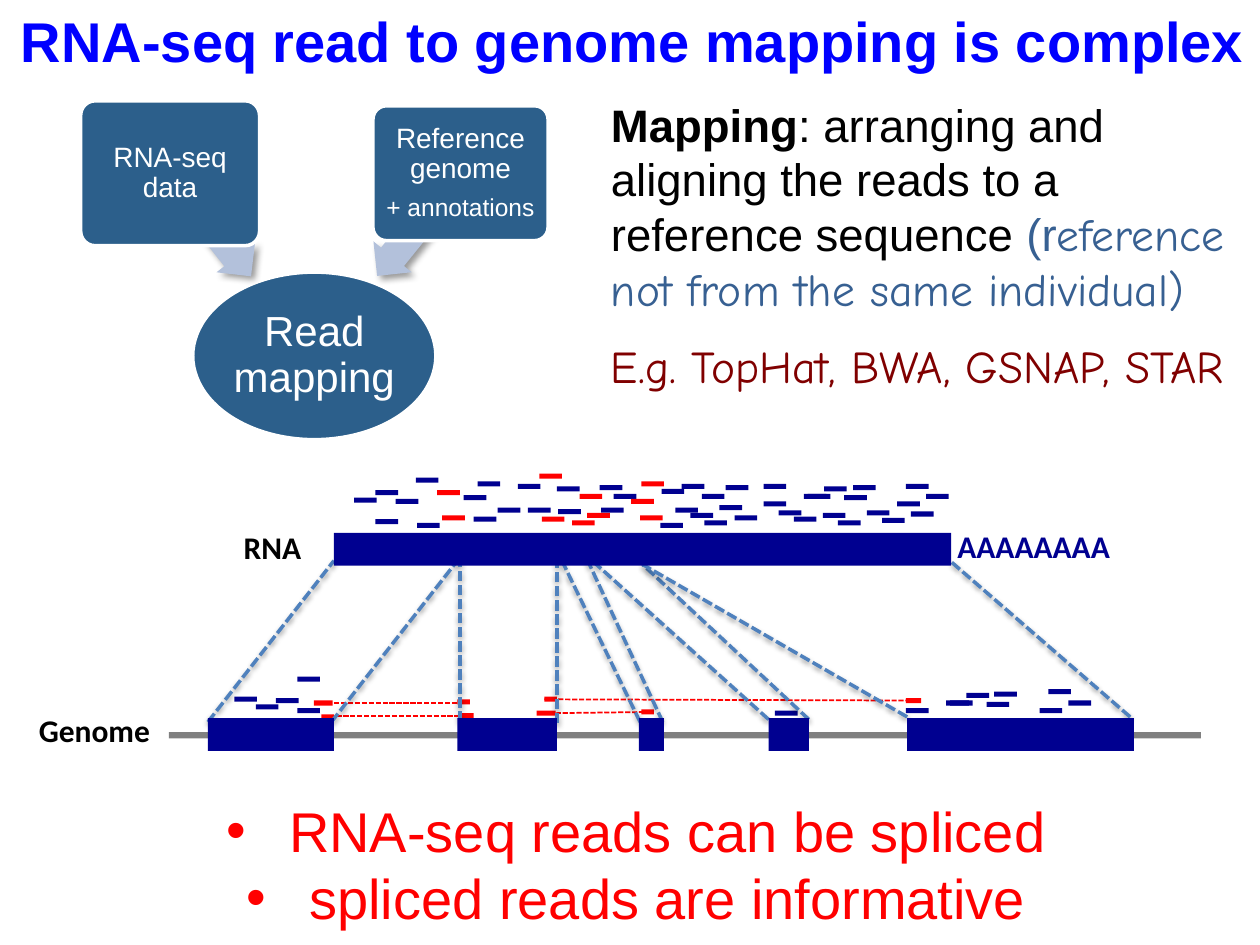
from lxml.etree import SubElement
from pptx import Presentation
from pptx.dml.color import RGBColor
from pptx.enum.dml import MSO_LINE
from pptx.enum.shapes import MSO_CONNECTOR, MSO_SHAPE
from pptx.enum.text import MSO_ANCHOR, PP_ALIGN
from pptx.oxml.ns import qn
from pptx.util import Inches, Pt

NAVY, RED, STEEL, WHITE, BLACK = "000090", "FF0000", "2C5F8B", "FFFFFF", "000000"
COLUMNS, ROWS = 100, 75
READ_WIDTH, READ_HEIGHT = 1.8, 0.4
EXON_TOP, EXON_HEIGHT = 57, 2.6


def color(hex_string):
    return RGBColor.from_string(hex_string)


def set_font(font, size, hex_color, name="Arial", bold=False):
    font.size, font.name, font.bold = Pt(size), name, bold
    font.color.rgb = color(hex_color)


class MappingSlide:
    """Places elements on a grid of 100 columns by 75 rows."""

    def __init__(self, deck):
        self.slide = deck.slides.add_slide(deck.slide_layouts[5])
        self.column = deck.slide_width / COLUMNS
        self.row = deck.slide_height / ROWS

    def place(self, left, top, width, height):
        return (round(left * self.column), round(top * self.row),
                round(width * self.column), round(height * self.row))

    def effects(self, element, shadow=None):
        effect_list = SubElement(element._element.spPr, qn("a:effectLst"))
        if shadow:
            alpha, blur, distance, angle = shadow
            outer = SubElement(effect_list, qn("a:outerShdw"), blurRad=str(Pt(blur)),
                               dist=str(Pt(distance)), dir=str(angle * 60000),
                               rotWithShape="0")
            black = SubElement(outer, qn("a:srgbClr"), val=BLACK)
            SubElement(black, qn("a:alpha"), val=str(alpha * 1000))

    def title(self, text, box):
        heading = self.slide.shapes.title
        heading.left, heading.top, heading.width, heading.height = self.place(*box)
        frame = heading.text_frame
        frame.word_wrap, frame.vertical_anchor = True, MSO_ANCHOR.TOP
        frame.margin_left = Inches(0.15)
        frame.text = text
        paragraph = frame.paragraphs[0]
        paragraph.alignment = PP_ALIGN.CENTER
        set_font(paragraph.font, 32, "0000FF", bold=True)

    def shape(self, kind, box, fill, outline=None, shadow=None, rotation=0, adjust=()):
        shape = self.slide.shapes.add_shape(kind, *self.place(*box))
        for index, value in enumerate(adjust):
            shape.adjustments[index] = value
        shape.rotation = rotation
        shape.fill.solid()
        shape.fill.fore_color.rgb = color(fill)
        if outline:
            shape.line.color.rgb = color(outline)
            shape.line.width = Pt(2)
        else:
            shape.line.fill.background()
        self.effects(shape, shadow)
        return shape

    def bar(self, left, top, width, height=READ_HEIGHT, fill=NAVY):
        self.shape(MSO_SHAPE.RECTANGLE, (left, top, width, height), fill)

    def reads(self, places, fill=NAVY):
        for left, top in places:
            self.bar(left, top, READ_WIDTH, fill=fill)

    def step(self, kind, box, lines, inset, adjust=()):
        """Workflow shape; lines are (text, size) pairs."""
        step = self.shape(kind, box, STEEL, outline=WHITE, adjust=adjust)
        frame = step.text_frame
        frame.word_wrap, frame.vertical_anchor = True, MSO_ANCHOR.MIDDLE
        frame.margin_left = frame.margin_right = Inches(inset)
        frame.margin_top = frame.margin_bottom = Inches(inset)
        for index, (text, size) in enumerate(lines):
            paragraph = frame.add_paragraph() if index else frame.paragraphs[0]
            paragraph.text = text
            paragraph.alignment = PP_ALIGN.CENTER
            paragraph.line_spacing = 0.9
            paragraph.space_after = Pt(round(size * 0.35))
            set_font(paragraph.font, size, WHITE)

    def dashed(self, start, end, hex_color, width, shadow=None):
        line = self.slide.shapes.add_connector(
            MSO_CONNECTOR.STRAIGHT, *self.place(*start, *end))
        line.line.color.rgb = color(hex_color)
        line.line.width = Pt(width)
        line.line.dash_style = MSO_LINE.SQUARE_DOT
        self.effects(line, shadow)

    def text_frame(self, box, wrap=True):
        frame = self.slide.shapes.add_textbox(*self.place(*box)).text_frame
        frame.word_wrap = wrap
        return frame

    def label(self, text, box, hex_color=BLACK, align=PP_ALIGN.LEFT):
        paragraph = self.text_frame(box, wrap=False).paragraphs[0]
        paragraph.text, paragraph.alignment = text, align
        set_font(paragraph.font, 18, hex_color, "Calibri", bold=True)

    def definition(self, box, paragraphs):
        """Each paragraph is a list of (text, colour, font, bold) runs."""
        frame = self.text_frame(box)
        for index, runs in enumerate(paragraphs):
            paragraph = frame.add_paragraph() if index else frame.paragraphs[0]
            if index:
                paragraph.space_before = Pt(13)
            for text, hex_color, name, bold in runs:
                run = paragraph.add_run()
                run.text = text
                set_font(run.font, 26, hex_color, name, bold)

    def bullets(self, box, lines):
        frame = self.text_frame(box)
        for index, text in enumerate(lines):
            paragraph = frame.add_paragraph() if index else frame.paragraphs[0]
            paragraph.text = text
            paragraph.alignment = PP_ALIGN.CENTER
            properties = paragraph._p.get_or_add_pPr()
            properties.set("marL", str(Inches(0.5)))
            properties.set("indent", str(Inches(-0.5)))
            SubElement(properties, qn("a:buFont"), typeface="Arial")
            SubElement(properties, qn("a:buChar"), char="•")
            set_font(paragraph.font, 32, RED)


def main():
    deck = Presentation()
    deck.slide_width, deck.slide_height = Inches(10), Inches(7.5)
    page = MappingSlide(deck)

    # Title, conclusions and definition
    page.title("RNA-seq read to genome mapping is complex", (0, 0, 100, 6.4))
    page.bullets((5.3, 62.7, 90.4, 11.8),
                 ["RNA-seq reads can be spliced", "spliced reads are informative"])
    page.definition((47.5, 7.2, 52.5, 24.6), [
        [("Mapping", BLACK, "Arial", True),
         (": arranging and aligning the reads to a reference sequence ",
          BLACK, "Arial", False),
         ("(r", "376092", "Arial", False),
         ("eference not from the same individual)", "376092", "Comic Neue", False)],
        [("E.g. TopHat, BWA, GSNAP, STAR", "800000", "Comic Neue", False)]])

    # Workflow: two inputs pointing to read mapping
    page.step(MSO_SHAPE.OVAL, (15.3, 21.6, 19.3, 13.3), [("Read mapping", 24)], 0.02)
    for left, rotation in ((11.5, 231.7), (28, 308.9)):
        page.shape(MSO_SHAPE.LEFT_ARROW, (left, 15.9, 10.4, 3.9), "B3C1DB",
                   shadow=(40, 4, 3, 45), rotation=rotation, adjust=(0.6, 0.5))
    page.step(MSO_SHAPE.ROUNDED_RECTANGLE, (6.4, 8, 14.2, 11.5),
              [("RNA-seq data", 16)], 0.03, (0.1,))
    page.step(MSO_SHAPE.ROUNDED_RECTANGLE, (29.6, 8.4, 13.9, 10.7),
              [("Reference genome", 16), ("+ annotations", 14)], 0.03, (0.1,))

    # Reads above the RNA: within one exon, then across a junction
    page.reads([
        (28.1, 39.5), (29.8, 41.2), (31.4, 39.6), (29.8, 38.9), (37.6, 41), (41.9, 40.3),
        (33.1, 41.5), (36.8, 39.3), (44.3, 40.4), (37.9, 38.2), (39.5, 40.3), (41.1, 38.4),
        (47.7, 40.3), (33, 37.9), (47.6, 38.5), (44.2, 38.6), (57.6, 38.5), (55.7, 39.2),
        (48.7, 39.2), (52.5, 38.8), (54.1, 38.4), (60.6, 38.4), (54.8, 40.7), (52.4, 41.5),
        (55.9, 41.3), (57.1, 40.1), (58.3, 40.9), (53.6, 40.3), (60.6, 39.8), (61.8, 40.5),
        (63, 41), (65.4, 38.6), (68.8, 40.5), (63.8, 39.2), (65.3, 40.7), (66.5, 41.3),
        (67, 39.3), (70, 41.1), (64.1, 39.2), (71.2, 39.8), (67.7, 38.5), (72.3, 40.6),
        (71.9, 38.4), (73.5, 39.2)])
    page.reads([(43, 41), (34.7, 38.9), (45.4, 41.3), (46.6, 40.7), (35.1, 40.9),
                (42.8, 37.6), (46, 39.2), (50.9, 38.2), (50.1, 39.6), (50.8, 40.9)], RED)

    # Reads mapped to the genome
    page.reads([
        (18.6, 55.3), (20.3, 55.9), (21.9, 55.4), (23.6, 56.2), (23.6, 53.7), (71.9, 56.2),
        (76.7, 55), (75.1, 55.6), (78.3, 55.7), (75.4, 55.6), (82.5, 56.2), (78.9, 54.9),
        (83.2, 54.7), (84.8, 55.6), (61.5, 56.4)])

    # Spliced reads: two pieces (left, top, width) joined by a dashed line
    spliced_reads = [
        ((24.9, 55.6, 1.5), (36.3, 55.5, 1), (26.5, 55.8), (36.4, 55.8)),
        ((25.5, 56.7, 1), (36.4, 56.6, 1.2), (26.7, 56.8), (36.6, 56.8)),
        ((42.6, 56.4, 1.5), (50.9, 56.3, 1), (44.1, 56.6), (51.9, 56.5)),
        ((43.2, 55.3, 1), (71.9, 55.4, 1.2), (43.2, 55.5), (72.5, 55.6))]
    for first, second, start, end in spliced_reads:
        page.bar(*first, fill=RED)
        page.bar(*second, fill=RED)
        page.dashed(start, end, RED, 1)

    # Exon edges projected from genome to RNA
    exon_edges = [
        (16.5, 57.3, 26.5, 44.5), (26.3, 57.3, 36.3, 44.5), (36.5, 57.3, 36.5, 44.5),
        (44.2, 57.4, 44.2, 44.6), (50.8, 57.3, 44.6, 44.5), (52.6, 57.3, 46.6, 44.4),
        (61, 57.1, 47, 44.5), (64.2, 57.1, 51, 44.8), (72, 56.9, 51, 44.8),
        (89.7, 56.9, 75.5, 44.6)]
    for edge in exon_edges:
        page.dashed(edge[:2], edge[2:], "4F81BD", 2, shadow=(38, 3.1, 1.6, 90))

    # Genome with its exons
    page.bar(13.4, 58.1, 81.9, 0.5, "808080")
    for left, width in ((16.5, 10), (36.3, 7.9), (50.7, 2), (72, 18), (61, 3.2)):
        page.bar(left, EXON_TOP, width, EXON_HEIGHT)
    page.label("Genome", (2.1, 55.9, 13.4, 4))

    # RNA with its tail
    page.label("RNA", (18.3, 41.4, 6.6, 4), align=PP_ALIGN.RIGHT)
    page.bar(26.5, 42.3, 49, EXON_HEIGHT)
    page.label("AAAAAAAA", (75, 41.3, 14.3, 4), NAVY)

    deck.save("out.pptx")


if __name__ == "__main__":
    main()
